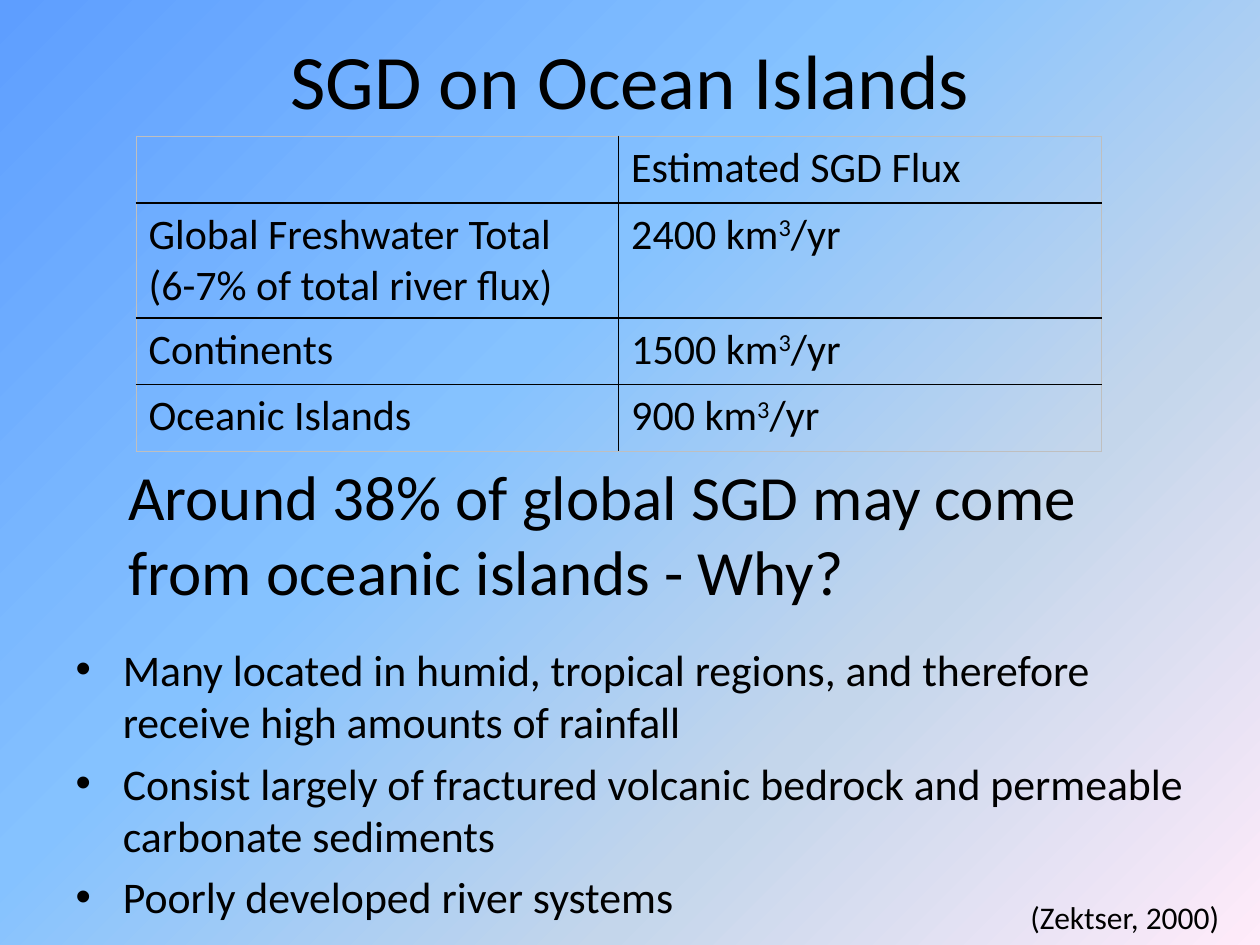
from lxml import etree
from pptx import Presentation
from pptx.dml.color import RGBColor
from pptx.enum.text import MSO_ANCHOR, MSO_AUTO_SIZE, PP_ALIGN
from pptx.oxml.ns import qn
from pptx.util import Inches, Pt

MIDDLE, CENTER, NO_FIT = MSO_ANCHOR.MIDDLE, PP_ALIGN.CENTER, MSO_AUTO_SIZE.NONE
FONT = "Calibri"
COLORS = {"text": "000000", "inner": "000000", "outer": "BFBFBF"}
GRADIENT = [(0, "5E9EFF"), (40, "85C2FF"), (70, "C4D6EB"), (100, "FFEBFA")]
ANGLE = 45

TITLE = "SGD on Ocean Islands"
# A cell is a list of paragraphs; "^" encloses superscript text
ROWS = [
    ([""], ["Estimated SGD Flux"]),
    (["Global Freshwater Total", "(6-7% of total river flux)"], ["2400 km^3^/yr"]),
    (["Continents"], ["1500 km^3^/yr"]),
    (["Oceanic Islands"], ["900 km^3^/yr"]),
]
ROW_HEIGHTS = [0.53, 0.91, 0.53, 0.53]
COLUMN_WIDTH = 3.83
REASONS = [
    "Many located in humid, tropical regions, and therefore receive high amounts of rainfall",
    "Consist largely of fractured volcanic bedrock and permeable carbonate sediments",
    "Poorly developed river systems",
]
# Text, position and size in inches, font size
NOTES = [
    ("Around 38% of global SGD may come from oceanic islands - Why?",
     (0.92, 3.58, 7.92, 1.31), 36),
    ("(Zektser, 2000)", (8.08, 7.08, 1.92, 0.42), 18),
]


def place(shape, left, top, width, height):
    shape.left, shape.top = Inches(left), Inches(top)
    shape.width, shape.height = Inches(width), Inches(height)


def style(frame, size):
    for para in frame.paragraphs:
        for span in para.runs:
            span.font.name = FONT
            span.font.size = Pt(size)
            span.font.color.rgb = RGBColor.from_string(COLORS["text"])


def add_color(parent, color):
    etree.SubElement(parent, qn("a:srgbClr"), val=color)


def set_background(page):
    page.background.fill.gradient()
    gradient = page.element.find(".//" + qn("a:gradFill"))
    stops = gradient.find(qn("a:gsLst"))
    for stop in list(stops):
        stops.remove(stop)
    for position, color in GRADIENT:
        add_color(etree.SubElement(stops, qn("a:gs"), pos=str(position * 1000)), color)
    gradient.find(qn("a:lin")).set("ang", str(ANGLE * 60000))


def set_borders(cell, edges):
    properties = cell._tc.get_or_add_tcPr()
    for index, (side, is_outer) in enumerate(edges.items()):
        line = etree.Element(qn("a:ln" + side), w=str(Pt(0.5 if is_outer else 1)))
        fill = etree.SubElement(line, qn("a:solidFill"))
        add_color(fill, COLORS["outer" if is_outer else "inner"])
        properties.insert(index, line)


def fill_cell(cell, lines):
    frame = cell.text_frame
    frame.text = "\n".join(lines)
    for para, line in zip(frame.paragraphs, lines):
        if "^" in line:
            para.text = ""
            for index, part in enumerate(line.split("^")):
                span = para.add_run()
                span.text = part
                if index % 2:
                    span.font._element.set("baseline", "30000")
        para.font.size = Pt(24)
    style(frame, 24)
    cell.fill.background()


deck = Presentation()
deck.slide_width, deck.slide_height = Inches(10), Inches(7.5)
page = deck.slides.add_slide(deck.slide_layouts[1])
set_background(page)

# Title
title = page.shapes.title
place(title, 0.5, 0, 9, 1.25)
title.text_frame.text = TITLE
title.text_frame.vertical_anchor = MIDDLE
title.text_frame.paragraphs[0].alignment = CENTER
style(title.text_frame, 44)

# Bulleted reasons
body = page.placeholders[1]
place(body, 0.5, 5.05, 9, 2.45)
body.text_frame.text = "\n".join(REASONS)
body.text_frame.auto_size = NO_FIT
style(body.text_frame, 25)

# Flux table
row_count, column_count = len(ROWS), len(ROWS[0])
table = page.shapes.add_table(
    row_count, column_count, Inches(1.08), Inches(1.08),
    Inches(COLUMN_WIDTH * column_count), Inches(sum(ROW_HEIGHTS))).table
table.first_row = table.horz_banding = False
for column in table.columns:
    column.width = Inches(COLUMN_WIDTH)
for r, (cells, height) in enumerate(zip(ROWS, ROW_HEIGHTS)):
    table.rows[r].height = Inches(height)
    for c, lines in enumerate(cells):
        cell = table.cell(r, c)
        fill_cell(cell, lines)
        set_borders(cell, {"L": c == 0, "R": c == column_count - 1,
                           "T": r == 0, "B": r == row_count - 1})

# Question and citation
for text, position, size in NOTES:
    box = page.shapes.add_textbox(*map(Inches, position))
    box.text_frame.word_wrap = True
    box.text_frame.text = text
    style(box.text_frame, size)

deck.save("out.pptx")
